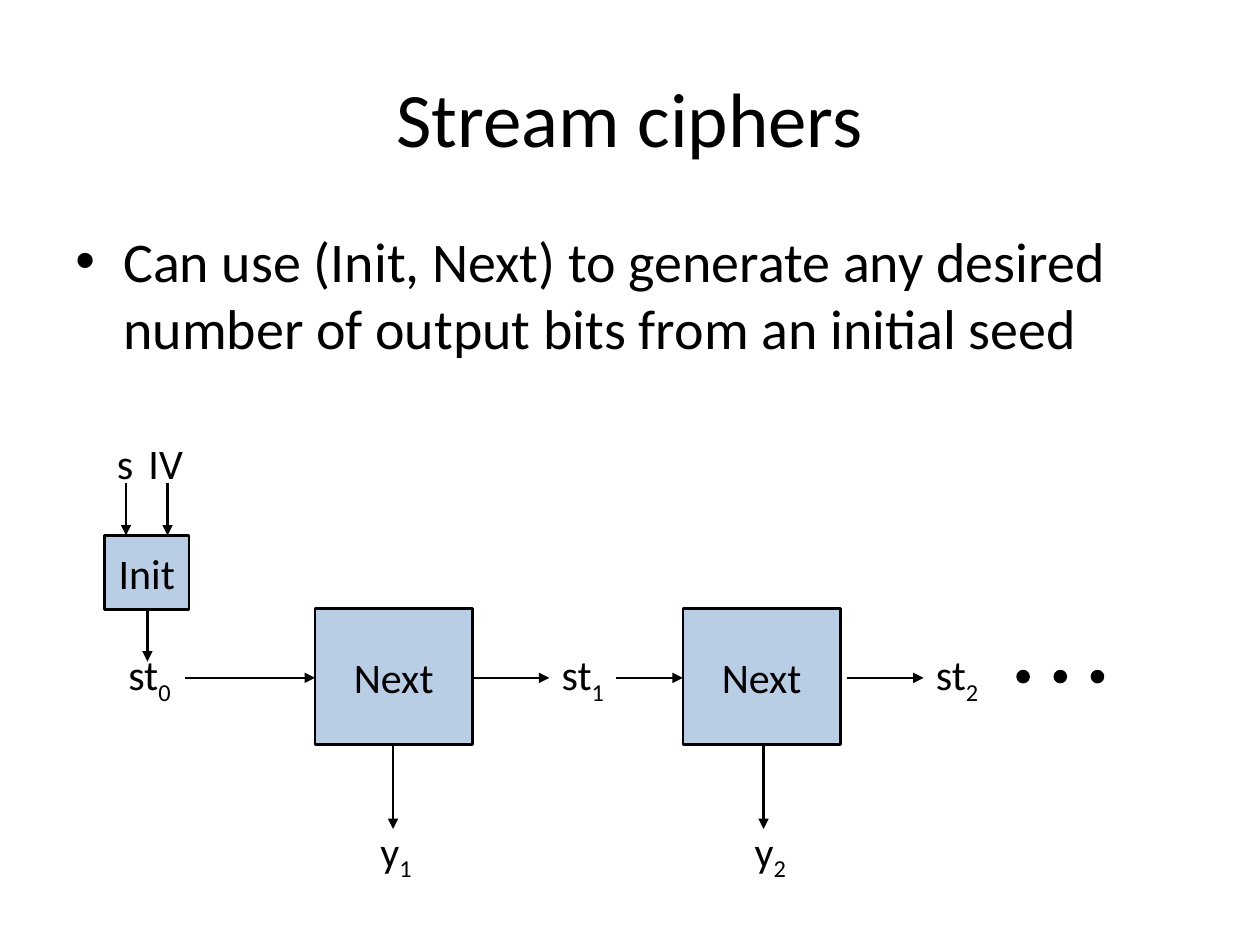
from lxml import etree
from pptx import Presentation
from pptx.dml.color import RGBColor
from pptx.enum.shapes import MSO_CONNECTOR, MSO_SHAPE
from pptx.enum.text import MSO_ANCHOR, PP_ALIGN
from pptx.oxml.ns import qn
from pptx.util import Inches, Pt

BLACK = RGBColor(0x00, 0x00, 0x00)
BLUE = RGBColor(0xB9, 0xCD, 0xE5)
RECTANGLE, OVAL = MSO_SHAPE.RECTANGLE, MSO_SHAPE.OVAL
STRAIGHT = MSO_CONNECTOR.STRAIGHT
CENTER, LEFT = PP_ALIGN.CENTER, PP_ALIGN.LEFT
MIDDLE, TOP = MSO_ANCHOR.MIDDLE, MSO_ANCHOR.TOP


def write(shape, text, size, align=LEFT, anchor=TOP, wrap=True, subscript=""):
    frame = shape.text_frame
    frame.word_wrap = wrap
    frame.vertical_anchor = anchor
    paragraph = frame.paragraphs[0]
    paragraph.alignment = align
    paragraph.font.name = "Calibri"
    paragraph.font.size = Pt(size)
    paragraph.font.color.rgb = BLACK
    paragraph.add_run().text = text
    if subscript:
        run = paragraph.add_run()
        run.text = subscript
        run.font._element.set("baseline", "-25000")
    return paragraph


def add_filled_shape(kind, left, top, width, height, fill, line_width):
    shape = slide.shapes.add_shape(
        kind, Inches(left), Inches(top), Inches(width), Inches(height))
    shape.shadow.inherit = False
    shape.fill.solid()
    shape.fill.fore_color.rgb = fill
    shape.line.color.rgb = BLACK
    shape.line.width = Pt(line_width)
    return shape


presentation = Presentation()
presentation.slide_width = Inches(10)
presentation.slide_height = Inches(7.5)
slide = presentation.slides.add_slide(presentation.slide_layouts[6])

# Title and bullet
title = slide.shapes.add_textbox(Inches(0.5), Inches(0.3), Inches(9), Inches(1.25))
write(title, "Stream ciphers", 44, CENTER, MIDDLE)

body = slide.shapes.add_textbox(Inches(0.5), Inches(1.75), Inches(9), Inches(4.95))
bullet = write(body, "Can use (Init, Next) to generate any desired "
               "number of output bits from an initial seed", 32)
properties = bullet._p.get_or_add_pPr()
properties.set("marL", str(Inches(0.38)))
properties.set("indent", str(Inches(-0.38)))
bullet_font = etree.Element(qn("a:buFont"), typeface="Arial")
bullet_character = etree.Element(qn("a:buChar"), char="•")
properties.insert(0, bullet_font)
bullet_font.addnext(bullet_character)

# Function boxes
for name, left, top, width, height in [
    ("Init", 0.83, 4.25, 0.67, 0.59),
    ("Next", 2.5, 4.83, 1.25, 1.08),
    ("Next", 5.42, 4.83, 1.25, 1.08),
]:
    box = add_filled_shape(RECTANGLE, left, top, width, height, BLUE, 1.5)
    write(box, name, 24, CENTER, MIDDLE, wrap=False)

# Inputs, states and outputs
for text, subscript, left, top, width in [
    ("s", "", 0.83, 3.42, 0.33),
    ("IV", "", 1.08, 3.42, 0.48),
    ("st", "0", 0.92, 5.1, 0.56),
    ("st", "1", 4.36, 5.1, 0.56),
    ("st", "2", 7.33, 5.1, 0.56),
    ("y", "1", 2.92, 6.5, 0.47),
    ("y", "2", 5.89, 6.5, 0.47),
]:
    label = slide.shapes.add_textbox(
        Inches(left), Inches(top), Inches(width), Inches(0.5))
    write(label, text, 24, wrap=False, subscript=subscript)

# Arrows: down into and out of the boxes, then along the state row
STATE_Y = 5.38
down_arrows = [(x, top, x, bottom) for x, top, bottom in [
    (1, 3.83, 4.25), (1.33, 3.83, 4.25), (1.17, 4.83, 5.25),
    (3.12, 5.92, 6.58), (6.06, 5.92, 6.58)]]
state_arrows = [(start, STATE_Y, end, STATE_Y) for start, end in [
    (1.47, 2.5), (3.75, 4.36), (4.89, 5.42), (6.72, 7.33)]]
for ends in down_arrows + state_arrows:
    arrow = slide.shapes.add_connector(STRAIGHT, *[Inches(value) for value in ends])
    arrow.line.color.rgb = BLACK
    arrow.line.width = Pt(1.5)
    etree.SubElement(arrow.line._get_or_add_ln(), qn("a:tailEnd"), type="triangle")
    etree.SubElement(arrow._element.spPr, qn("a:effectLst"))

# Continuation dots
for index in range(3):
    add_filled_shape(OVAL, 8.08 + 0.295 * index, 5.33, 0.08, 0.08, BLACK, 2)

presentation.save("out.pptx")
